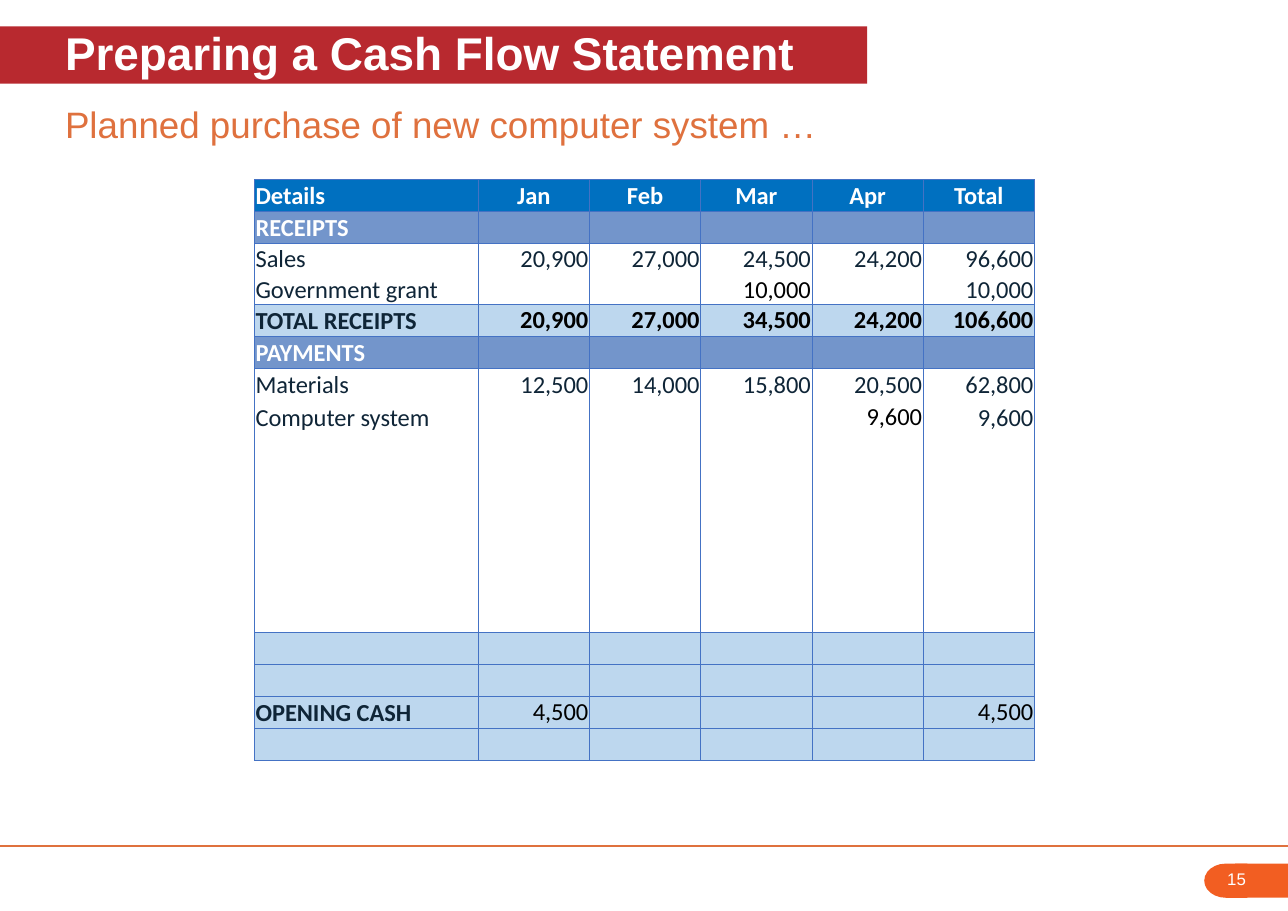
from lxml import etree
from pptx import Presentation
from pptx import util as u
from pptx.dml.color import RGBColor
from pptx.enum import shapes, text
from pptx.oxml.ns import qn

WHITE, INK, BLACK = "FFFFFF", "0F2537", "000000"
RED, ORANGE, CORAL = "B8292F", "F25E22", "DF713E"
HEADER, SECTION, SUMMARY, GRID = "0070C0", "7395CB", "BDD7EE", "4472C4"

deck = Presentation()
deck.slide_width, deck.slide_height = u.Inches(11.69), u.Inches(8.27)
page = deck.slides.add_slide(deck.slide_layouts[6])


def spot(left, top, width, height):
    """Turn percentages of the slide into left, top, width and height."""
    across, down = deck.slide_width / 100, deck.slide_height / 100
    return [int(left * across), int(top * down), int(width * across), int(height * down)]


def style(para, face, size, colour, bold=False):
    para.font.name, para.font.size, para.font.bold = face, u.Pt(size), bold
    para.font.color.rgb = RGBColor.from_string(colour)


# Footer rule and page number tab
left, top, width, height = spot(0, 92.87, 100, 0)
rule = page.shapes.add_connector(shapes.MSO_CONNECTOR.STRAIGHT, left, top, left + width, top)
rule.line.color.rgb = RGBColor.from_string(CORAL)
rule.line.width = u.Pt(0.75)
etree.SubElement(rule._element.spPr, qn("a:effectLst"))

# Filled shapes: preset, place, colour, rotation
bars = [
    (shapes.MSO_SHAPE.FLOWCHART_DELAY, spot(93.5, 94.8, 3.34, 3.75), ORANGE, 180),
    (shapes.MSO_SHAPE.RECTANGLE, spot(95.9, 94.8, 4.1, 3.75), ORANGE, 0),
    (shapes.MSO_SHAPE.RECTANGLE, spot(0, 2.9, 67.32, 6.29), RED, 0),
]
for preset, place, colour, rotation in bars:
    bar = page.shapes.add_shape(preset, *place)
    bar.shadow.inherit = False
    bar.rotation = rotation
    bar.fill.solid()
    bar.fill.fore_color.rgb = RGBColor.from_string(colour)
    bar.line.fill.background()
title = bar

# Headings: the title sits in the red bar, the subtitle in a box below
subtitle = page.shapes.add_textbox(*spot(0, 10.76, 100, 6.17))
headings = [
    (title, "Preparing a Cash Flow Statement", 30, WHITE, True),
    (subtitle, "Planned purchase of new computer system …", 24, CORAL, False),
]
for box, words, size, colour, bold in headings:
    frame = box.text_frame
    frame.word_wrap = True
    frame.vertical_anchor = text.MSO_ANCHOR.MIDDLE
    frame.margin_left, frame.margin_bottom = u.Inches(0.59), u.Inches(0.05)
    frame.margin_top = frame.margin_right = 0
    para = frame.paragraphs[0]
    para.text = words
    para.alignment = text.PP_ALIGN.LEFT
    style(para, "Arial", size, colour, bold)

number = page.shapes.add_textbox(*spot(94.44, 94.8, 4.79, 3.39))
number.text_frame.word_wrap = True
number.text_frame.paragraphs[0].text = "15"
style(number.text_frame.paragraphs[0], "Arial", 11, WHITE)

# Cash flow table: kind of row, then its cells
statement = [
    ("header", "Details", "Jan", "Feb", "Mar", "Apr", "Total"),
    ("section", "RECEIPTS"),
    ("receipt", "Sales", "20,900", "27,000", "24,500", "24,200", "96,600"),
    ("receipt", "Government grant", "", "", "10,000", "", "10,000"),
    ("total", "TOTAL RECEIPTS", "20,900", "27,000", "34,500", "24,200", "106,600"),
    ("section", "PAYMENTS"),
    ("payment", "Materials", "12,500", "14,000", "15,800", "20,500", "62,800"),
    ("payment", "Computer system", "", "", "", "9,600", "9,600"),
    *[("payment",)] * 6,
    *[("cash",)] * 2,
    ("cash", "OPENING CASH", "4,500", "", "", "", "4,500"),
    ("cash",),
]
# Kind of row: fill, label colour, row height in inches
kinds = {
    "header": (HEADER, WHITE, 0.29),
    "section": (SECTION, WHITE, 0.29),
    "receipt": (WHITE, INK, 0.27),
    "payment": (WHITE, INK, 0.3),
    "total": (SUMMARY, INK, 0.29),
    "cash": (SUMMARY, INK, 0.29),
}
items = ("receipt", "payment")
one_off_entries = {("Government grant", 3), ("Computer system", 4)}
columns = [2.03] + [1.01] * 5

left, top, width, height = spot(19.76, 19.71, 60.48, 63.6)
table = page.shapes.add_table(len(statement), len(columns), left, top, width, height).table
table.first_row = table.horz_banding = False
for column, inches in zip(table.columns, columns):
    column.width = u.Inches(inches)

row_kinds = [row[0] for row in statement]
for r, (kind, *entries) in enumerate(statement):
    fill, ink, row_height = kinds[kind]
    table.rows[r].height = u.Inches(row_height)
    open_top = kind in items and row_kinds[r - 1] == kind
    open_bottom = kind in items and row_kinds[r + 1] == kind
    for c in range(len(columns)):
        cell = table.cell(r, c)
        cell.margin_left = cell.margin_right = cell.margin_top = u.Inches(0.01)
        cell.margin_bottom = 0
        for side, is_open in (("L", False), ("R", False), ("T", open_top), ("B", open_bottom)):
            edge = etree.SubElement(cell._tc.get_or_add_tcPr(), qn(f"a:ln{side}"), w=str(u.Pt(0.5)))
            if is_open:
                etree.SubElement(edge, qn("a:noFill"))
            else:
                paint = etree.SubElement(edge, qn("a:solidFill"))
                etree.SubElement(paint, qn("a:srgbClr"), val=GRID)
        cell.fill.solid()
        cell.fill.fore_color.rgb = RGBColor.from_string(fill)

        para = cell.text_frame.paragraphs[0]
        words = entries[c] if c < len(entries) else ""
        if not words:
            etree.SubElement(para._p, qn("a:endParaRPr"), sz="1600")
            continue
        para.text = words
        entered = c > 0 and (kind in ("total", "cash") or (entries[0], c) in one_off_entries)
        cell.vertical_anchor = text.MSO_ANCHOR.TOP if entered else text.MSO_ANCHOR.MIDDLE
        if c > 0:
            para.alignment = text.PP_ALIGN.CENTER if kind == "header" else text.PP_ALIGN.RIGHT
        bold = kind not in items and not (kind == "cash" and c > 0)
        style(para, "Calibri", 16, BLACK if entered else ink, bold)

deck.save("out.pptx")
